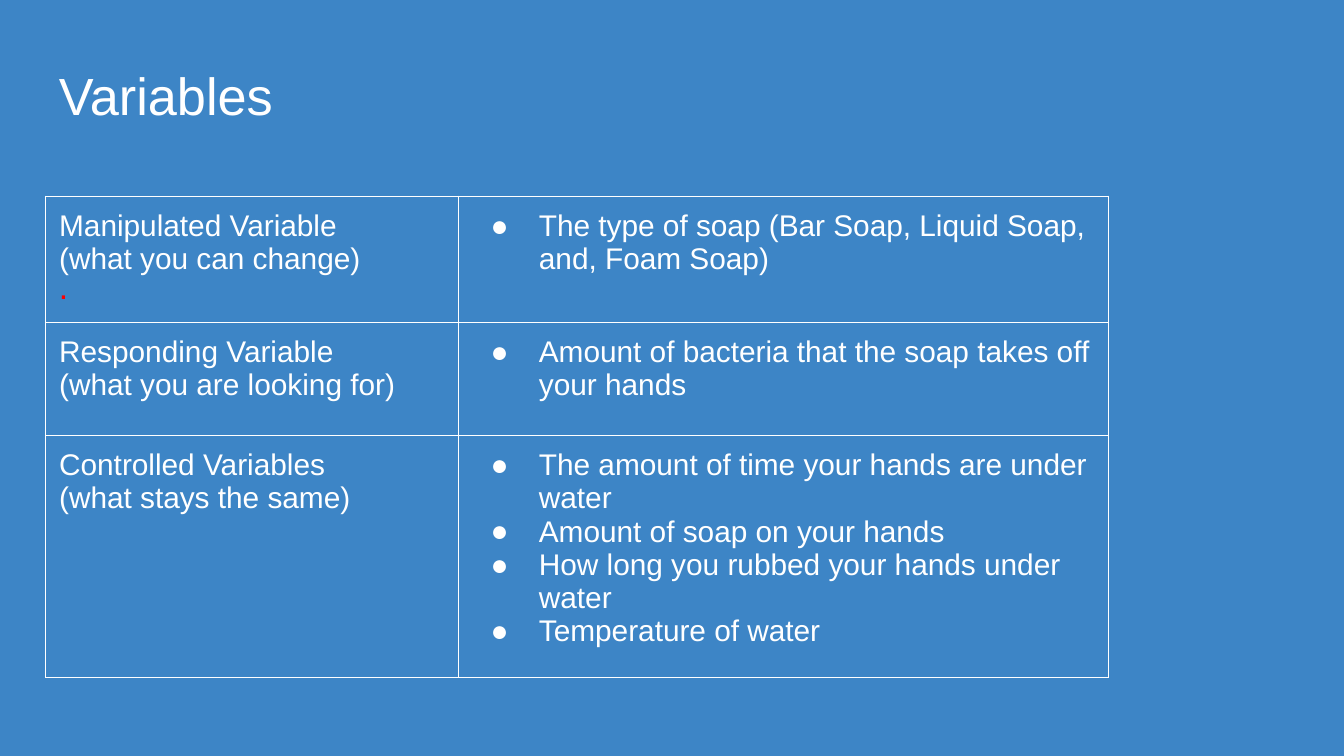
from dataclasses import dataclass

from lxml.etree import SubElement
from pptx import Presentation
from pptx.dml.color import RGBColor
from pptx.oxml.ns import qn
from pptx.util import Inches, Pt


@dataclass(frozen=True)
class Theme:
    font: str = "Arial"
    background: RGBColor = RGBColor(0x3D, 0x85, 0xC6)
    text: RGBColor = RGBColor(0xFF, 0xFF, 0xFF)
    accent: RGBColor = RGBColor(0xFF, 0x00, 0x00)
    title_size: Pt = Pt(28)
    body_size: Pt = Pt(18)
    table_size: Pt = Pt(16)
    border: Pt = Pt(0.75)


theme = Theme()


def write_lines(frame, lines, size, color, bulleted=False):
    frame.word_wrap = True
    for index, line in enumerate(lines):
        paragraph = frame.paragraphs[0] if index == 0 else frame.add_paragraph()
        paragraph.text = line
        if bulleted:
            properties = paragraph._p.get_or_add_pPr()
            properties.set("marL", str(Inches(0.5)))
            properties.set("indent", str(Inches(-0.36)))
            bullet_color = SubElement(properties, qn("a:buClr"))
            SubElement(bullet_color, qn("a:srgbClr"), val=str(color))
            SubElement(properties, qn("a:buFont"), typeface=theme.font)
            SubElement(properties, qn("a:buChar"), char="●")
        paragraph.font.name = theme.font
        paragraph.font.size = size
        paragraph.font.color.rgb = color


def set_insets(holder, top=0.1):
    holder.margin_left = holder.margin_right = holder.margin_bottom = Inches(0.1)
    holder.margin_top = Inches(top)


presentation = Presentation()
presentation.slide_width = Inches(10)
presentation.slide_height = Inches(10) * 9 // 16
slide = presentation.slides.add_slide(presentation.slide_layouts[6])
slide.background.fill.solid()
slide.background.fill.fore_color.rgb = theme.background

text_boxes = [
    ("Variables", 0.37, 9.32, 0.63, 0.1, theme.title_size, theme.text),
    (".", 1.26, 2.83, 3.74, 1.23, theme.body_size, theme.accent),
]
for text, top, width, height, top_inset, size, color in text_boxes:
    box = slide.shapes.add_textbox(Inches(0.34), Inches(top), Inches(width), Inches(height))
    set_insets(box.text_frame, top_inset)
    write_lines(box.text_frame, [text], size, color)

variables = [
    (
        0.94,
        ["Manipulated Variable", "(what you can change)"],
        ["The type of soap (Bar Soap, Liquid Soap, and, Foam Soap)"],
    ),
    (
        0.84,
        ["Responding Variable", "(what you are looking for)"],
        ["Amount of bacteria that the soap takes off your hands"],
    ),
    (
        1.68,
        ["Controlled Variables", "(what stays the same)"],
        [
            "The amount of time your hands are under water",
            "Amount of soap on your hands",
            "How long you rubbed your hands under water",
            "Temperature of water",
        ],
    ),
]
column_widths = [3.07, 4.84]
table_height = sum(height for height, *_ in variables)
table = slide.shapes.add_table(
    len(variables), len(column_widths),
    Inches(0.34), Inches(1.46), Inches(sum(column_widths)), Inches(table_height),
).table
table.first_row = False
table.horz_banding = False
for column, width in zip(table.columns, column_widths):
    column.width = Inches(width)

for row, (height, *contents) in zip(table.rows, variables):
    row.height = Inches(height)
    for column_index, (cell, lines) in enumerate(zip(row.cells, contents)):
        set_insets(cell)
        write_lines(cell.text_frame, lines, theme.table_size, theme.text, column_index == 1)
        properties = cell._tc.get_or_add_tcPr()
        for side in ("a:lnL", "a:lnR", "a:lnT", "a:lnB"):
            line = SubElement(properties, qn(side), w=str(theme.border))
            line_fill = SubElement(line, qn("a:solidFill"))
            SubElement(line_fill, qn("a:srgbClr"), val=str(theme.text))
        cell.fill.background()

presentation.save("out.pptx")
